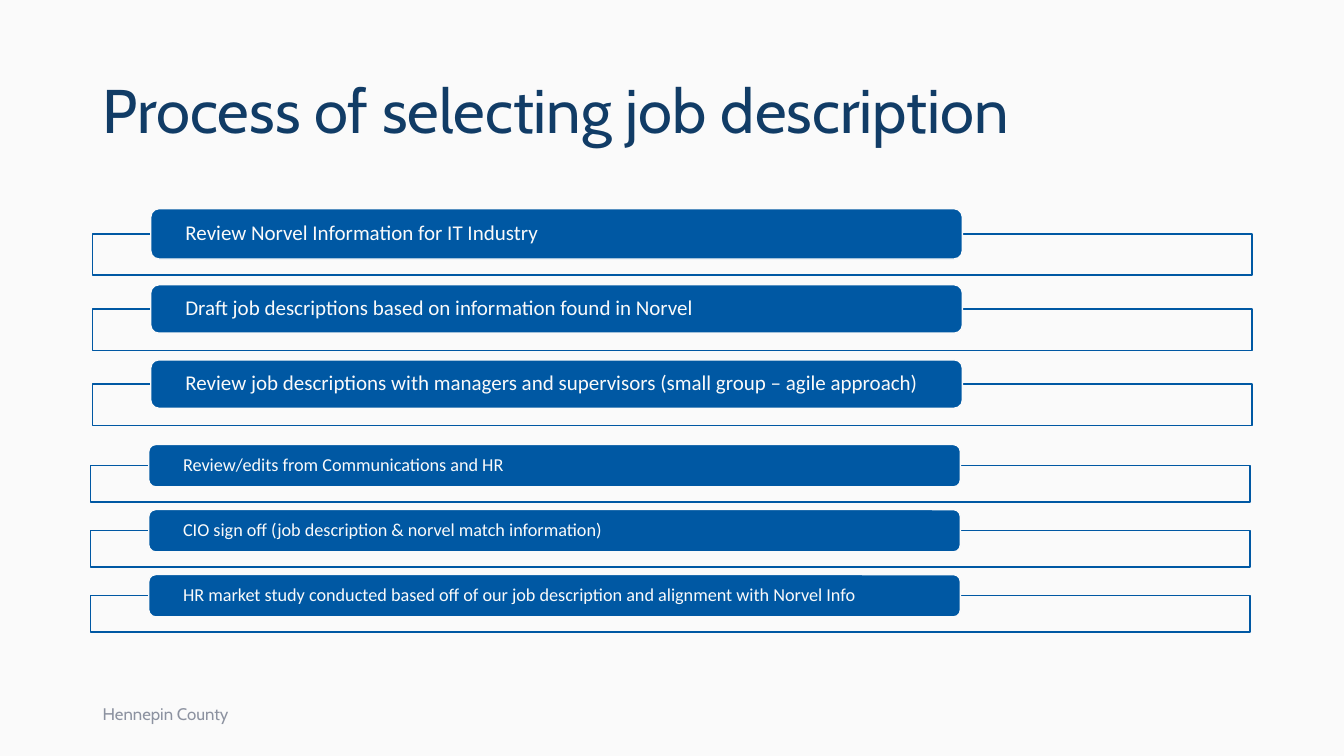
from dataclasses import dataclass

from pptx import Presentation
from pptx.dml.color import RGBColor
from pptx.enum.shapes import MSO_SHAPE
from pptx.enum.text import MSO_ANCHOR, MSO_AUTO_SIZE, PP_ALIGN
from pptx.util import Inches, Pt


@dataclass(frozen=True)
class Theme:
    background: RGBColor = RGBColor.from_string("FAFAFA")
    heading: RGBColor = RGBColor.from_string("113C66")
    accent: RGBColor = RGBColor.from_string("0058A3")
    muted: RGBColor = RGBColor.from_string("8C92A0")
    brand_font: str = "Cabin"
    step_font: str = "Calibri"
    title_size: int = 44
    main_step_size: int = 15
    later_step_size: int = 13
    footer_size: int = 12


THEME = Theme()

DRAFTING_STEPS = [
    "Review Norvel Information for IT Industry",
    "Draft job descriptions based on information found in Norvel",
    "Review job descriptions with managers and supervisors (small group – agile approach)",
]
APPROVAL_STEPS = [
    "Review/edits from Communications and HR",
    "CIO sign off (job description & norvel match information)",
    "HR market study conducted based off of our job description and alignment with Norvel Info",
]


def write(shape, text, *, size, color, font, line_spacing=1.0, side_margin=0.1):
    """Put one left-aligned, vertically centred paragraph into a shape."""
    frame = shape.text_frame
    frame.word_wrap = True
    frame.auto_size = MSO_AUTO_SIZE.NONE
    frame.vertical_anchor = MSO_ANCHOR.MIDDLE
    frame.margin_left = frame.margin_right = Inches(side_margin)
    frame.margin_top = frame.margin_bottom = 0
    paragraph = frame.paragraphs[0]
    paragraph.alignment = PP_ALIGN.LEFT
    paragraph.line_spacing = line_spacing
    run = paragraph.add_run()
    run.text = text
    run.font.size = Pt(size)
    run.font.name = font
    run.font.color.rgb = color


def add_panel(slide, kind, left, top, width, height, fill, line):
    panel = slide.shapes.add_shape(
        kind, Inches(left), Inches(top), Inches(width), Inches(height))
    panel.shadow.inherit = False
    panel.fill.solid()
    panel.fill.fore_color.rgb = fill
    panel.line.color.rgb = line
    panel.line.width = Pt(1)
    return panel


def add_title(slide, left, top, width, height):
    title = slide.shapes.title
    title.left, title.top = Inches(left), Inches(top)
    title.width, title.height = Inches(width), Inches(height)
    write(title, "Process of selecting job description", size=THEME.title_size,
          color=THEME.heading, font=THEME.brand_font, line_spacing=0.9)


def add_steps(slide, steps, left, top, width, *, pitch, frame_height, bar_heights, size):
    """Stack outlined frames, each with a step bar centred on its top edge."""
    for index, (step, bar_height) in enumerate(zip(steps, bar_heights)):
        frame_top = top + index * pitch
        add_panel(slide, MSO_SHAPE.RECTANGLE, left, frame_top, width, frame_height,
                  THEME.background, THEME.accent)
        bar = add_panel(slide, MSO_SHAPE.ROUNDED_RECTANGLE, left + 0.05 * width,
                        frame_top - bar_height / 2, 0.7 * width, bar_height,
                        THEME.accent, THEME.background)
        write(bar, step, size=size, color=THEME.background, font=THEME.step_font,
              line_spacing=0.9, side_margin=0.32)


def add_footer(slide, left, top, width, height):
    footer = slide.shapes.add_textbox(
        Inches(left), Inches(top), Inches(width), Inches(height))
    write(footer, "Hennepin County", size=THEME.footer_size,
          color=THEME.muted, font=THEME.brand_font)


def main():
    presentation = Presentation()
    presentation.slide_width = Inches(13.33)
    presentation.slide_height = Inches(7.5)
    slide = presentation.slides.add_slide(presentation.slide_layouts[5])
    slide.background.fill.solid()
    slide.background.fill.fore_color.rgb = THEME.background

    add_title(slide, 0.92, 0.4, 11.5, 1.45)
    add_steps(slide, DRAFTING_STEPS, 0.92, 2.32, 11.5, pitch=0.745, frame_height=0.41,
              bar_heights=[0.5, 0.48, 0.48], size=THEME.main_step_size)
    add_footer(slide, 0.92, 6.88, 4.09, 0.4)
    add_steps(slide, APPROVAL_STEPS, 0.9, 4.62, 11.5, pitch=0.645, frame_height=0.36,
              bar_heights=[0.42] * 3, size=THEME.later_step_size)
    presentation.save("out.pptx")


if __name__ == "__main__":
    main()
